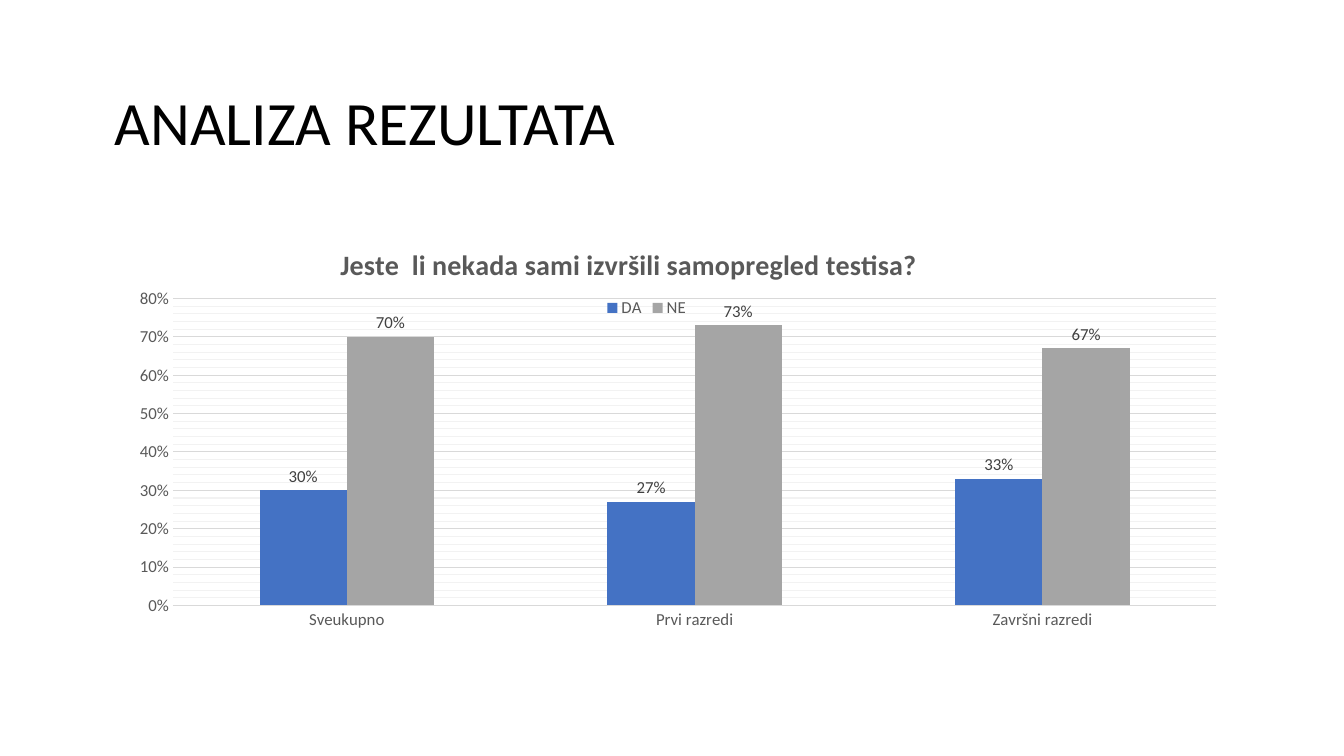
from copy import deepcopy

from lxml import etree
from pptx import Presentation
from pptx.chart.data import CategoryChartData
from pptx.dml.color import RGBColor
from pptx.enum.chart import XL_CHART_TYPE as ChartType
from pptx.enum.chart import XL_LABEL_POSITION as LabelPosition
from pptx.enum.chart import XL_LEGEND_POSITION as LegendPosition
from pptx.enum.chart import XL_TICK_MARK as TickMark
from pptx.enum.text import MSO_ANCHOR as Anchor
from pptx.enum.text import PP_ALIGN as Align
from pptx.oxml.ns import qn
from pptx.util import Inches, Pt

FONT = "Calibri"
BLACK = RGBColor(0x00, 0x00, 0x00)
GRAY_TEXT = RGBColor(0x59, 0x59, 0x59)
LABEL_TEXT = RGBColor(0x40, 0x40, 0x40)
GRID = RGBColor(0xD9, 0xD9, 0xD9)
MINOR_GRID = RGBColor(0xF2, 0xF2, 0xF2)
BLUE = RGBColor(0x44, 0x72, 0xC4)
GRAY = RGBColor(0xA5, 0xA5, 0xA5)

CATEGORIES = ["Sveukupno", "Prvi razredi", "Završni razredi"]
SERIES = [
    ("DA", [0.30, 0.27, 0.33], BLUE),
    ("NE", [0.70, 0.73, 0.67], GRAY),
]


def write_text(frame, text, size, color, bold=False, align=Align.LEFT, spacing=None):
    paragraph = frame.paragraphs[0]
    paragraph.alignment = align
    paragraph.line_spacing = spacing
    run = paragraph.add_run()
    run.text = text
    run.font.name = FONT
    run.font.size = Pt(size)
    run.font.bold = bold
    run.font.color.rgb = color


def set_layout(element, index, **shares):
    """Place a chart part by shares of the chart's size; index is the layout's child position."""
    for old_layout in element.findall(qn("c:layout")):
        element.remove(old_layout)
    layout = etree.Element(qn("c:layout"))
    manual = etree.SubElement(layout, qn("c:manualLayout"))
    if "w" in shares:
        etree.SubElement(manual, qn("c:layoutTarget"), val="inner")
    for key in ("x", "y"):
        etree.SubElement(manual, qn(f"c:{key}Mode"), val="edge")
    for key, share in shares.items():
        etree.SubElement(manual, qn(f"c:{key}"), val=str(share))
    element.insert(index, layout)


presentation = Presentation()
presentation.slide_width = Inches(13.33)
presentation.slide_height = Inches(7.5)
slide = presentation.slides.add_slide(presentation.slide_layouts[5])

title = slide.shapes.title
title.left, title.top = Inches(1.04), Inches(0.52)
title.width, title.height = Inches(11.5), Inches(1.45)
title.text_frame.vertical_anchor = Anchor.MIDDLE
write_text(title.text_frame, "ANALIZA REZULTATA", size=44, color=BLACK, spacing=0.9)

chart_data = CategoryChartData(number_format="0%")
chart_data.categories = CATEGORIES
for name, values, color in SERIES:
    chart_data.add_series(name, values)
chart = slide.shapes.add_chart(
    ChartType.COLUMN_CLUSTERED,
    Inches(0.68), Inches(2.2), Inches(11.5), Inches(4.48),
    chart_data,
).chart
chart.font.name = FONT
chart.font.size = Pt(10)

chart.has_title = True
write_text(
    chart.chart_title.text_frame,
    "Jeste  li nekada sami izvršili samopregled testisa?",
    size=20, color=GRAY_TEXT, bold=True, align=Align.CENTER,
)
chart.has_legend = True
chart.legend.position = LegendPosition.TOP
chart.legend.include_in_layout = False

category_axis, value_axis = chart.category_axis, chart.value_axis
for axis in (category_axis, value_axis):
    axis.major_tick_mark = axis.minor_tick_mark = TickMark.NONE
value_axis.minimum_scale, value_axis.maximum_scale = 0, 0.8
value_axis.major_unit, value_axis.minor_unit = 0.1, 0.02
value_axis.tick_labels.number_format = "0%"
value_axis.tick_labels.number_format_is_linked = False
value_axis.format.line.fill.background()
value_axis.has_major_gridlines = value_axis.has_minor_gridlines = True
for part in (category_axis, value_axis.major_gridlines):
    part.format.line.color.rgb = GRID
    part.format.line.width = Pt(0.75)

chart_element = chart._chartSpace.find(qn("c:chart"))
plot_area = chart_element.find(qn("c:plotArea"))
value_axis_element = plot_area.find(qn("c:valAx"))
major_style = value_axis_element.find(qn("c:majorGridlines")).find(qn("c:spPr"))
minor_style = deepcopy(major_style)
next(minor_style.iter(qn("a:srgbClr"))).set("val", str(MINOR_GRID))
value_axis_element.find(qn("c:minorGridlines")).append(minor_style)

plot = chart.plots[0]
plot.gap_width = 199
plot.overlap = 0
plot.vary_by_categories = False
fonts = [
    (category_axis.tick_labels.font, GRAY_TEXT),
    (value_axis.tick_labels.font, GRAY_TEXT),
    (chart.legend.font, GRAY_TEXT),
]
for series, (name, values, color) in zip(plot.series, SERIES):
    series.format.fill.solid()
    series.format.fill.fore_color.rgb = color
    series.invert_if_negative = False
    labels = series.data_labels
    labels.show_value = True
    labels.number_format = "0%"
    labels.number_format_is_linked = False
    labels.position = LabelPosition.OUTSIDE_END
    fonts.append((labels.font, LABEL_TEXT))
for font, color in fonts:
    font.name = FONT
    font.size = Pt(12)
    font.color.rgb = color

set_layout(chart_element.find(qn("c:title")), 1, x=0.23, y=0.04)
set_layout(chart_element.find(qn("c:legend")), 1, x=0.46, y=0.16)
set_layout(plot_area, 0, x=0.09, y=0.17, w=0.9, h=0.68)

presentation.save("out.pptx")
